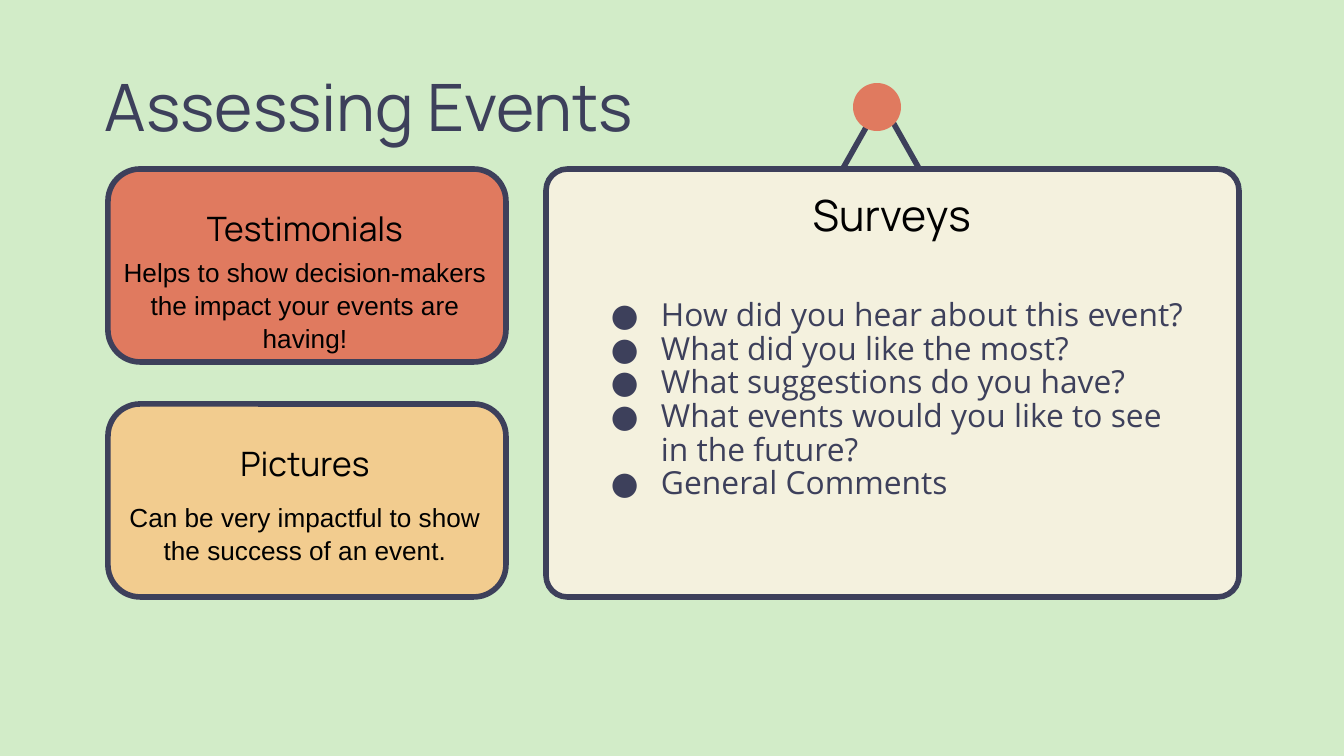
from dataclasses import dataclass

from lxml import etree
from pptx import Presentation
from pptx import util as u
from pptx.dml.color import RGBColor
from pptx.enum import shapes, text
from pptx.oxml.ns import qn

PX = 9144000 / 1344  # EMU per px


@dataclass(frozen=True)
class Theme:
    background: str = "D2ECC8"
    ink: str = "3D405B"
    black: str = "000000"
    coral: str = "E07A5F"
    sand: str = "F2CC8F"
    cream: str = "F4F1DE"
    heading_font: str = "Manrope"
    note_font: str = "Arial"
    list_font: str = "Open Sans"
    title_size: int = 35
    board_size: int = 23
    card_size: int = 18
    list_size: int = 17
    note_size: int = 14
    outline: int = 3


theme = Theme()


def panel(kind, box, fill, outlined=True):
    shape = slide.shapes.add_shape(kind, *(round(v * PX) for v in box))
    shape.shadow.inherit = False
    shape.fill.solid()
    shape.fill.fore_color.rgb = RGBColor.from_string(fill)
    if outlined:
        shape.line.color.rgb = RGBColor.from_string(theme.ink)
        shape.line.width = u.Pt(theme.outline)
    else:
        shape.line.fill.background()
    return shape


def write(holder, box, lines, font, size, color, align, anchor, spacing=1.0, inset=0):
    holder.left, holder.top, holder.width, holder.height = (round(v * PX) for v in box)
    frame = holder.text_frame
    frame.word_wrap = True
    frame.auto_size = text.MSO_AUTO_SIZE.NONE
    frame.vertical_anchor = anchor
    frame.margin_left = frame.margin_right = round(inset * PX)
    frame.margin_top = frame.margin_bottom = round(inset * PX)
    for i, line in enumerate(lines):
        paragraph = frame.add_paragraph() if i else frame.paragraphs[0]
        paragraph.alignment = align
        paragraph.line_spacing = spacing
        paragraph.space_before = u.Pt(0)
        run = paragraph.add_run()
        run.text = line
        run.font.name = font
        run.font.size = u.Pt(size)
        run.font.color.rgb = RGBColor.from_string(color)


prs = Presentation()
prs.slide_width, prs.slide_height = round(1344 * PX), round(756 * PX)
slide = prs.slides.add_slide(prs.slide_layouts[1])
slide.background.fill.solid()
slide.background.fill.fore_color.rgb = RGBColor.from_string(theme.background)
title, questions = slide.placeholders

left, center = text.PP_ALIGN.LEFT, text.PP_ALIGN.CENTER
top, middle, bottom = text.MSO_ANCHOR.TOP, text.MSO_ANCHOR.MIDDLE, text.MSO_ANCHOR.BOTTOM
rounded = shapes.MSO_SHAPE.ROUNDED_RECTANGLE

# Title
write(title, (105, 66, 835, 79), ["Assessing Events"],
      theme.heading_font, theme.title_size, theme.ink, left, middle)

# Hanging string and pin
for foot in (837, 925):
    string = slide.shapes.add_connector(
        shapes.MSO_CONNECTOR.STRAIGHT,
        *(round(v * PX) for v in (foot, 179, 881, 101)))
    string.line.color.rgb = RGBColor.from_string(theme.ink)
    string.line.width = u.Pt(theme.outline)
    etree.SubElement(string.element.spPr, qn("a:effectLst"))
panel(shapes.MSO_SHAPE.OVAL, (853, 83, 48, 48), theme.coral, outlined=False)

# Survey board
board = panel(rounded, (546, 169, 693, 428), theme.cream)
board.adjustments[0] = 0.05
write(slide.shapes.add_textbox(0, 0, 0, 0), (704, 192, 376, 48), ["Surveys"],
      theme.heading_font, theme.board_size, theme.black, center, bottom)

# Survey questions, brought in front of the board
write(questions, (581, 287, 623, 258),
      ["How did you hear about this event?",
       "What did you like the most?",
       "What suggestions do you have?",
       "What events would you like to see in the future?",
       "General Comments"],
      theme.list_font, theme.list_size, theme.ink, left, top, spacing=0.88, inset=13)
for paragraph in questions.text_frame.paragraphs:
    props = paragraph._p.get_or_add_pPr()
    props.set("marL", str(round(67 * PX)))
    props.set("indent", str(round(-50 * PX)))
    bullet_color = etree.SubElement(props, qn("a:buClr"))
    etree.SubElement(bullet_color, qn("a:srgbClr"), val=theme.ink)
    etree.SubElement(props, qn("a:buFont"), typeface=theme.list_font)
    etree.SubElement(props, qn("a:buChar"), char="●")
slide.shapes.element.append(questions.element)

# Cards: top, fill, heading, note, offset of the note inside the card
cards = [
    (169, theme.coral, "Testimonials",
     "Helps to show decision-makers the impact your events are having!", 86),
    (404, theme.sand, "Pictures",
     "Can be very impactful to show the success of an event.", 96),
]
for card_top, fill, heading, note, note_offset in cards:
    panel(rounded, (108, card_top, 398, 193), fill)
    write(slide.shapes.add_textbox(0, 0, 0, 0), (117, card_top + 31, 376, 48), [heading],
          theme.heading_font, theme.card_size, theme.black, center, bottom)
    write(slide.shapes.add_textbox(0, 0, 0, 0), (117, card_top + note_offset, 376, 70), [note],
          theme.note_font, theme.note_size, theme.black, center, top, spacing=1.05)

prs.save("out.pptx")
